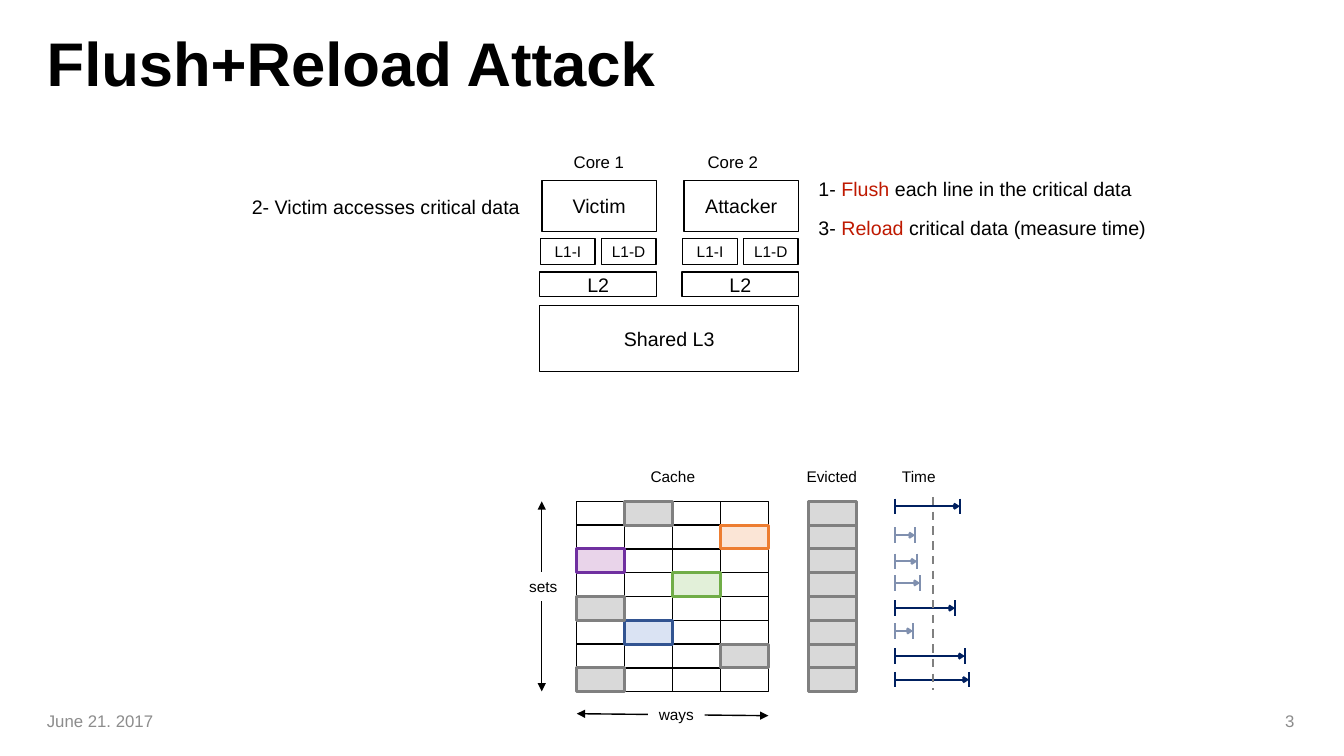
from pptx import Presentation
from pptx.dml.color import RGBColor
from pptx.enum.dml import MSO_LINE
from pptx.enum.shapes import MSO_CONNECTOR, MSO_SHAPE
from pptx.enum.text import MSO_ANCHOR, PP_ALIGN
from pptx.oxml.ns import qn
from pptx.util import Pt
from lxml import etree

RECTANGLE = MSO_SHAPE.RECTANGLE
STRAIGHT = MSO_CONNECTOR.STRAIGHT
DASH = MSO_LINE.DASH
TOP, MIDDLE = MSO_ANCHOR.TOP, MSO_ANCHOR.MIDDLE
LEFT, CENTER, RIGHT = PP_ALIGN.LEFT, PP_ALIGN.CENTER, PP_ALIGN.RIGHT

BLACK = RGBColor(0x00, 0x00, 0x00)
WHITE = RGBColor(0xFF, 0xFF, 0xFF)
RED = RGBColor(0xBF, 0x19, 0x01)
GRAY = RGBColor(0x80, 0x80, 0x80)
LIGHT_GRAY = RGBColor(0xD9, 0xD9, 0xD9)
FOOTER_GRAY = RGBColor(0x8C, 0x8C, 0x8C)
NAVY = RGBColor(0x00, 0x20, 0x60)
PALE_NAVY = RGBColor(0x80, 0x90, 0xAF)
PURPLE = RGBColor(0x70, 0x30, 0xA0)
LIGHT_PURPLE = RGBColor(0xE9, 0xD4, 0xEA)
GREEN = RGBColor(0x70, 0xAD, 0x47)
LIGHT_GREEN = RGBColor(0xE2, 0xF0, 0xD9)
BLUE = RGBColor(0x32, 0x54, 0x91)
LIGHT_BLUE = RGBColor(0xDA, 0xE3, 0xF3)
ORANGE = RGBColor(0xED, 0x7D, 0x31)
LIGHT_ORANGE = RGBColor(0xFB, 0xE5, 0xD6)

# Cache grid
ROWS, COLUMNS = 8, 4
GRID_LEFT, GRID_TOP = 412, 358.1
CELL_WIDTH, CELL_HEIGHT = 34.2, 17
EVICTED_LEFT = 577.4

# Cached lines: (row, column) to fill and outline
CACHED_LINES = {
    (2, 0): (LIGHT_PURPLE, PURPLE),
    (3, 2): (LIGHT_GREEN, GREEN),
    (5, 1): (LIGHT_BLUE, BLUE),
    (1, 3): (LIGHT_ORANGE, ORANGE),
    (0, 1): (LIGHT_GRAY, GRAY),
    (4, 0): (LIGHT_GRAY, GRAY),
    (6, 3): (LIGHT_GRAY, GRAY),
    (7, 0): (LIGHT_GRAY, GRAY),
}

# Reload times: height on the slide, length, colour
TIME_LEFT = 639.2
RELOAD_TIMES = [
    (361.6, 46.5, NAVY),
    (382.3, 14.5, PALE_NAVY),
    (401, 16, PALE_NAVY),
    (416.4, 18, PALE_NAVY),
    (434.4, 43, NAVY),
    (450.7, 13, PALE_NAVY),
    (468.6, 50, NAVY),
    (485.5, 53, NAVY),
]


def apply_format(target, values):
    for name, value in values.items():
        setattr(target, name, value)


def write_text(shape, runs, size, align, anchor=MIDDLE, wrap=True, inset=None,
               bold=False, spacing=None):
    """Fill a shape with one paragraph of (text, colour) runs."""
    frame = shape.text_frame
    apply_format(frame, {"word_wrap": wrap, "vertical_anchor": anchor})
    if inset is not None:
        sides = ("margin_left", "margin_right", "margin_top", "margin_bottom")
        apply_format(frame, dict.fromkeys(sides, Pt(inset)))
    paragraph = frame.paragraphs[0]
    apply_format(paragraph, {"alignment": align, "line_spacing": spacing})
    for text, color in runs:
        run = paragraph.add_run()
        run.text = text
        apply_format(run.font, {"name": "Arial", "size": Pt(size), "bold": bold})
        run.font.color.rgb = color


def add_text(slide, box, runs, size, align=LEFT, **options):
    text_box = slide.shapes.add_textbox(*map(Pt, box))
    write_text(text_box, runs, size, align, **options)


def add_label(slide, box, text, size=11, align=CENTER):
    add_text(slide, box, [(text, BLACK)], size, align, anchor=TOP, wrap=False)


def add_box(slide, box, fill=None, outline=BLACK, width=1, text=None, size=14):
    shape = slide.shapes.add_shape(RECTANGLE, *map(Pt, box))
    shape.shadow.inherit = False
    if fill is None:
        shape.fill.background()
    else:
        shape.fill.solid()
        shape.fill.fore_color.rgb = fill
    if outline is None:
        shape.line.fill.background()
    else:
        shape.line.color.rgb = outline
        shape.line.width = Pt(width)
    if text:
        write_text(shape, [(text, BLACK)], size, CENTER, wrap=False, inset=0)


def add_line(slide, start, end, color=BLACK, width=1, dash=None, head=None, tail=None,
             head_size="med"):
    line = slide.shapes.add_connector(STRAIGHT, *map(Pt, start + end))
    line.line.color.rgb = color
    apply_format(line.line, {"width": Pt(width), "dash_style": dash})
    properties = line._element.spPr
    for tag, kind in (("a:headEnd", head), ("a:tailEnd", tail)):
        if kind:
            etree.SubElement(properties.find(qn("a:ln")), qn(tag),
                             type=kind, w=head_size, len=head_size)
    etree.SubElement(properties, qn("a:effectLst"))


def add_cell(slide, left, row, fill=None, outline=BLACK, width=1):
    top = GRID_TOP + row * CELL_HEIGHT
    add_box(slide, (left, top, CELL_WIDTH, CELL_HEIGHT), fill, outline, width)


def add_core(slide, left, label_left, name, program):
    add_label(slide, (label_left, 105.1, 50.4, 21.6), name, 12)
    add_box(slide, (left + 1.4, 128.8, 82, 36.7), WHITE, text=program)
    for offset, cache in ((0.6, "L1-I"), (44, "L1-D")):
        add_box(slide, (left + offset, 170.6, 39, 18.6), WHITE, text=cache, size=11)
    add_box(slide, (left, 194.2, 83.4, 17.8), WHITE, text="L2")


def add_reload_time(slide, middle, length, color):
    right = TIME_LEFT + length
    add_line(slide, (TIME_LEFT, middle), (right, middle), color, 1.5,
             tail="arrow", head_size="sm")
    for x in (TIME_LEFT, right):
        add_line(slide, (x, middle - 5.5), (x, middle + 5.5), color, 1.5)


def main():
    presentation = Presentation()
    apply_format(presentation, {"slide_width": Pt(960), "slide_height": Pt(540)})
    slide = presentation.slides.add_slide(presentation.slide_layouts[6])

    # Title
    add_text(slide, (26.3, 19.2, 906, 57), [("Flush+Reload Attack", BLACK)], 44,
             bold=True, spacing=0.9)

    # Processor cores and shared cache
    add_core(slide, 385.6, 402.6, "Core 1", "Victim")
    add_core(slide, 487.1, 498.3, "Core 2", "Attacker")
    add_box(slide, (385.6, 218.3, 185, 47), WHITE, text="Shared L3")

    # Attack steps
    add_text(slide, (577.6, 121.2, 252, 26.6),
             [("1-", BLACK), (" Flush ", RED), ("each line in the critical data", BLACK)], 14)
    add_text(slide, (172.8, 134.6, 210, 26.6), [("2- Victim accesses critical data", BLACK)], 14)
    add_text(slide, (577.6, 149.2, 274, 26.6),
             [("3-", BLACK), (" Reload ", RED), ("critical data (measure time)", BLACK)], 14)

    # Cache sets and ways, with evicted lines beside them
    add_label(slide, (457.2, 330, 46.8, 20.9), "Cache")
    add_label(slide, (569, 330, 51.1, 20.9), "Evicted", align=LEFT)
    for row in range(ROWS):
        for column in range(COLUMNS):
            if (row, column) not in CACHED_LINES:
                add_cell(slide, GRID_LEFT + column * CELL_WIDTH, row)
        add_cell(slide, EVICTED_LEFT, row, LIGHT_GRAY, GRAY, 2.25)
    for (row, column), (fill, outline) in CACHED_LINES.items():
        add_cell(slide, GRID_LEFT + column * CELL_WIDTH, row, fill, outline, 2.25)

    # Dimension arrows
    add_line(slide, (GRID_LEFT, 509.8), (548.9, 511.2), head="triangle", tail="triangle")
    add_line(slide, (387, GRID_TOP), (387, 493.9), head="triangle", tail="triangle")
    add_box(slide, (463, 500, 40.3, 20.6), WHITE, None, text="ways", size=11)
    add_box(slide, (370.4, 408.6, 35.3, 20.6), WHITE, None, text="sets", size=11)

    # Reload times and threshold
    add_label(slide, (637.2, 330, 38.9, 20.9), "Time", align=LEFT)
    for middle, length, color in RELOAD_TIMES:
        add_reload_time(slide, middle, length, color)
    add_line(slide, (666.3, 355), (666.3, 493.2), GRAY, 1.5, DASH)

    # Footer
    add_text(slide, (26.4, 500.4, 216, 28.8), [("June 21. 2017", FOOTER_GRAY)], 12)
    add_text(slide, (715.7, 500.4, 216, 28.8), [("3", FOOTER_GRAY)], 12, RIGHT)

    presentation.save("out.pptx")


if __name__ == "__main__":
    main()
